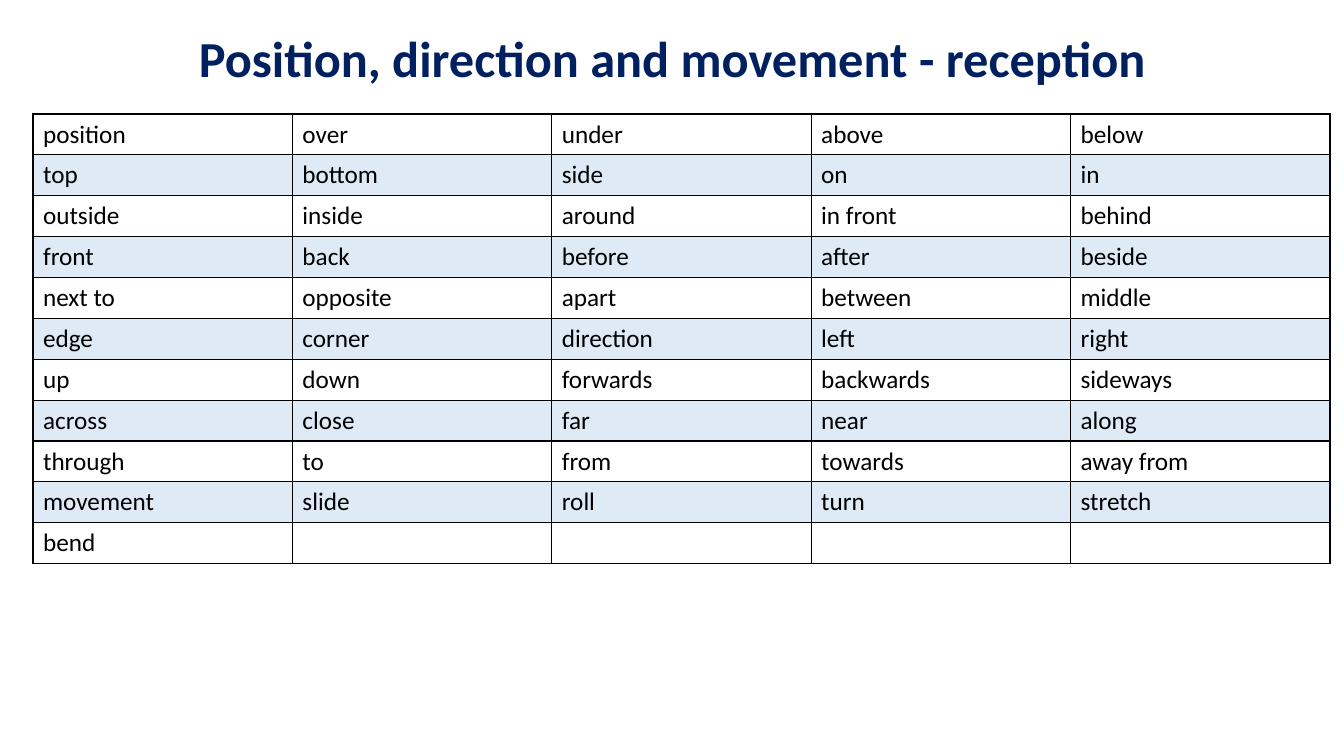
from dataclasses import dataclass

from lxml import etree
from pptx import Presentation
from pptx.dml.color import RGBColor as RGB
from pptx.enum.text import MSO_ANCHOR as ANCHOR, PP_ALIGN as ALIGN
from pptx.oxml import parse_xml
from pptx.oxml.ns import nsdecls, qn
from pptx.util import Pt


@dataclass
class Theme:
    font: str = "Calibri"
    title: str = "002060"
    text: str = "000000"
    border: str = "000000"
    band: str = "5B9BD5"
    band_alpha: int = 20
    title_size: int = 36
    cell_size: int = 18
    border_width: int = 1


theme = Theme()
SCALE = 914400 / 100.8


def px(*lengths):
    return [round(n * SCALE) for n in lengths]


def style(p, size, color, bold=False):
    for r in p.runs:
        r.font.name = theme.font
        r.font.size = Pt(size)
        r.font.bold = bold
        r.font.color.rgb = RGB.from_string(color)


words = [
    ["position", "over", "under", "above", "below"],
    ["top", "bottom", "side", "on", "in"],
    ["outside", "inside", "around", "in front", "behind"],
    ["front", "back", "before", "after", "beside"],
    ["next to", "opposite", "apart", "between", "middle"],
    ["edge", "corner", "direction", "left", "right"],
    ["up", "down", "forwards", "backwards", "sideways"],
    ["across", "close", "far", "near", "along"],
    ["through", "to", "from", "towards", "away from"],
    ["movement", "slide", "roll", "turn", "stretch"],
    ["bend", "", "", "", ""],
]

prs = Presentation()
prs.slide_width, prs.slide_height = px(1344, 756)
s = prs.slides.add_slide(prs.slide_layouts[6])

title = s.shapes.add_textbox(*px(93, 20, 1159, 82))
tf = title.text_frame
tf.word_wrap = True
tf.vertical_anchor = ANCHOR.MIDDLE
tf.text = "Position, direction and movement - reception"
p = tf.paragraphs[0]
p.alignment = ALIGN.CENTER
p.line_spacing = 0.9
style(p, theme.title_size, theme.title, bold=True)

table = s.shapes.add_table(len(words), len(words[0]), *px(33, 114, 1297, 450)).table
table.first_row = False
table.horz_banding = False

for i, row in enumerate(words):
    for j, word in enumerate(row):
        cell = table.cell(i, j)
        cell.text = word
        p = cell.text_frame.paragraphs[0]
        p.font.size = Pt(theme.cell_size)
        style(p, theme.cell_size, theme.text)

        tc_pr = cell._tc.get_or_add_tcPr()
        if i % 2:
            cell.fill.solid()
            cell.fill.fore_color.rgb = RGB.from_string(theme.band)
            color = tc_pr.find(".//" + qn("a:srgbClr"))
            etree.SubElement(color, qn("a:alpha"), val=str(theme.band_alpha * 1000))
        else:
            cell.fill.background()

        for k, side in enumerate(("lnL", "lnR", "lnT", "lnB")):
            line = parse_xml(
                f'<a:{side} {nsdecls("a")} w="{Pt(theme.border_width)}"><a:solidFill>'
                f'<a:srgbClr val="{theme.border}"/></a:solidFill></a:{side}>'
            )
            tc_pr.insert(k, line)

prs.save("out.pptx")
